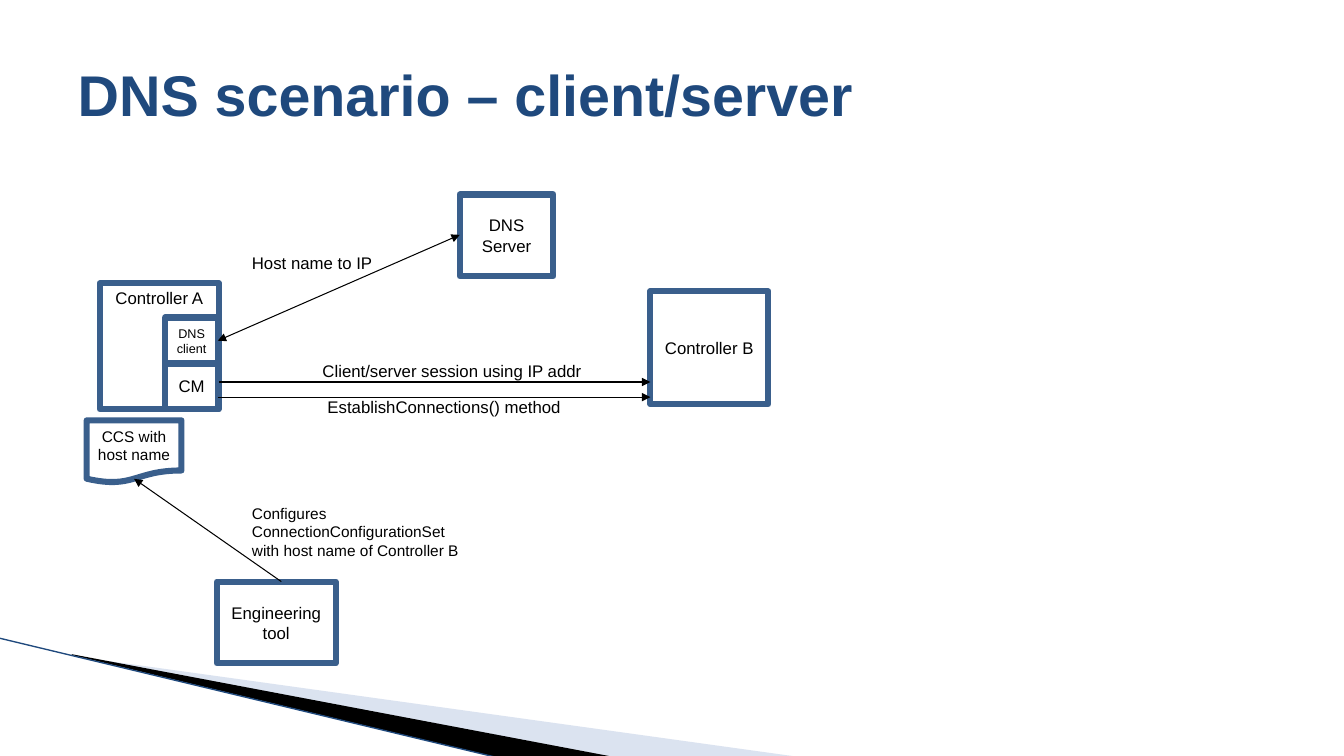
from dataclasses import dataclass

from lxml import etree
from pptx import Presentation
from pptx import util as u
from pptx.dml import color
from pptx.enum import shapes, text
from pptx.oxml import ns

FRAME = "3A5F8C"
NAVY = "1F497D"
BLACK = "000000"
MIDDLE = text.MSO_ANCHOR.MIDDLE
TOP = text.MSO_ANCHOR.TOP
RECTANGLE = shapes.MSO_SHAPE.RECTANGLE
DOCUMENT = shapes.MSO_SHAPE.FLOWCHART_DOCUMENT


@dataclass
class Node:
    label: str
    area: tuple[float, float, float, float]
    size: float = 12
    anchor: text.MSO_ANCHOR = MIDDLE
    outline: shapes.MSO_SHAPE = RECTANGLE


@dataclass
class Caption:
    label: str
    area: tuple[float, float, float, float]
    size: float = 12
    wrap: bool = False


@dataclass
class Arrow:
    start: tuple[float, float]
    end: tuple[float, float]
    ends: tuple[str, ...] = ("tailEnd",)
    tint: str = BLACK
    width: float = 0.75


@dataclass
class Wedge:
    points: list[tuple[float, float]]
    tint: str
    opacity: int = 100


WEDGES = [
    Wedge([(0.73, 6.51), (7.93, 7.51), (6.08, 7.51), (0.73, 6.5)], "A7B9DB", 40),
    Wedge([(0.71, 6.49), (6.09, 7.51), (4.96, 7.52), (0.72, 6.5)], BLACK),
]
EDGE = Arrow((-0.01, 6.33), (4.95, 7.52), (), NAVY, 0.95)

NODES = [
    Node("Controller A", (0.99, 2.81, 1.18, 1.25), anchor=TOP),
    Node("CM", (1.64, 3.6, 0.52, 0.46)),
    Node("DNS Server", (4.56, 1.93, 0.93, 0.81)),
    Node("CCS with host name", (0.86, 4.17, 0.94, 0.62), 11, outline=DOCUMENT),
    Node("Controller B", (6.45, 2.89, 1.17, 1.12)),
    Node("DNS client", (1.64, 3.15, 0.52, 0.46), 9),
    Node("Engineering tool", (2.15, 5.77, 1.18, 0.81)),
]
CAPTIONS = [
    Caption("Host name to IP", (2.4, 2.46, 1.41, 0.3)),
    Caption("Client/server session using IP addr", (3.1, 3.53, 2.79, 0.3)),
    Caption("EstablishConnections() method", (3.15, 3.89, 2.53, 0.3)),
    Caption(
        "Configures ConnectionConfigurationSet with host name of Controller B",
        (2.4, 4.95, 2.39, 0.66), 11, True,
    ),
]
ARROWS = [
    Arrow((2.16, 3.38), (4.56, 2.33), ("headEnd", "tailEnd")),
    Arrow((2.17, 3.79), (6.45, 3.79)),
    Arrow((2.16, 3.94), (6.45, 3.94)),
    Arrow((2.79, 5.77), (1.33, 4.75)),
]


def paint(target, tint: str) -> None:
    target.rgb = color.RGBColor.from_string(tint)


def inches(values) -> list:
    return [u.Inches(value) for value in values]


def write(frame, label: str, size: float, tint: str = BLACK,
          bold: bool = False, align=text.PP_ALIGN.LEFT) -> None:
    para = frame.paragraphs[0]
    para.alignment = align
    span = para.add_run()
    span.text = label
    formats = {"name": "Arial", "size": u.Pt(size), "bold": bold}
    for key, value in formats.items():
        setattr(span.font, key, value)
    paint(span.font.color, tint)


def draw_wedge(page, wedge: Wedge) -> None:
    first, *rest = [tuple(inches(point)) for point in wedge.points]
    builder = page.shapes.build_freeform(*first)
    builder.add_line_segments(rest, close=True)
    shape = builder.convert_to_shape()
    shape.shadow.inherit = False
    shape.line.fill.background()
    shape.fill.solid()
    paint(shape.fill.fore_color, wedge.tint)
    if wedge.opacity < 100:
        tone = shape.fill._xPr.find(".//" + ns.qn("a:srgbClr"))
        etree.SubElement(tone, ns.qn("a:alpha"), val=str(wedge.opacity * 1000))


def draw_arrow(page, arrow: Arrow) -> None:
    line = page.shapes.add_connector(
        shapes.MSO_CONNECTOR.STRAIGHT, *inches(arrow.start + arrow.end))
    paint(line.line.color, arrow.tint)
    line.line.width = u.Pt(arrow.width)
    for end in arrow.ends:
        etree.SubElement(line.line._ln, ns.qn("a:" + end), type="triangle")
    etree.SubElement(line._element.spPr, ns.qn("a:effectLst"))


def draw_node(page, node: Node) -> None:
    box = page.shapes.add_shape(node.outline, *inches(node.area))
    box.shadow.inherit = False
    box.fill.background()
    paint(box.line.color, FRAME)
    box.line.width = u.Pt(4.33)
    etree.SubElement(box.line._ln, ns.qn("a:round"))
    box.text_frame.word_wrap = True
    box.text_frame.vertical_anchor = node.anchor
    write(box.text_frame, node.label, node.size, align=text.PP_ALIGN.CENTER)


def draw_caption(page, caption: Caption) -> None:
    frame = page.shapes.add_textbox(*inches(caption.area)).text_frame
    frame.word_wrap = caption.wrap
    frame.auto_size = text.MSO_AUTO_SIZE.SHAPE_TO_FIT_TEXT
    write(frame, caption.label, caption.size)


def draw_title(page) -> None:
    title = page.shapes.title
    area = inches((0.67, 0.3, 12, 1.25))
    for key, value in zip(("left", "top", "width", "height"), area):
        setattr(title, key, value)
    title.text_frame.vertical_anchor = MIDDLE
    title.text_frame.auto_size = text.MSO_AUTO_SIZE.NONE
    write(title.text_frame, "DNS scenario – client/server", 41, NAVY, True)


def main() -> None:
    deck = Presentation()
    deck.slide_width, deck.slide_height = inches((13.33, 7.5))
    page = deck.slides.add_slide(deck.slide_layouts.get_by_name("Title Only"))
    draw_title(page)
    for wedge in WEDGES:
        draw_wedge(page, wedge)
    draw_arrow(page, EDGE)
    for node in NODES:
        draw_node(page, node)
    for arrow in ARROWS:
        draw_arrow(page, arrow)
    for caption in CAPTIONS:
        draw_caption(page, caption)
    deck.save("out.pptx")


if __name__ == "__main__":
    main()
